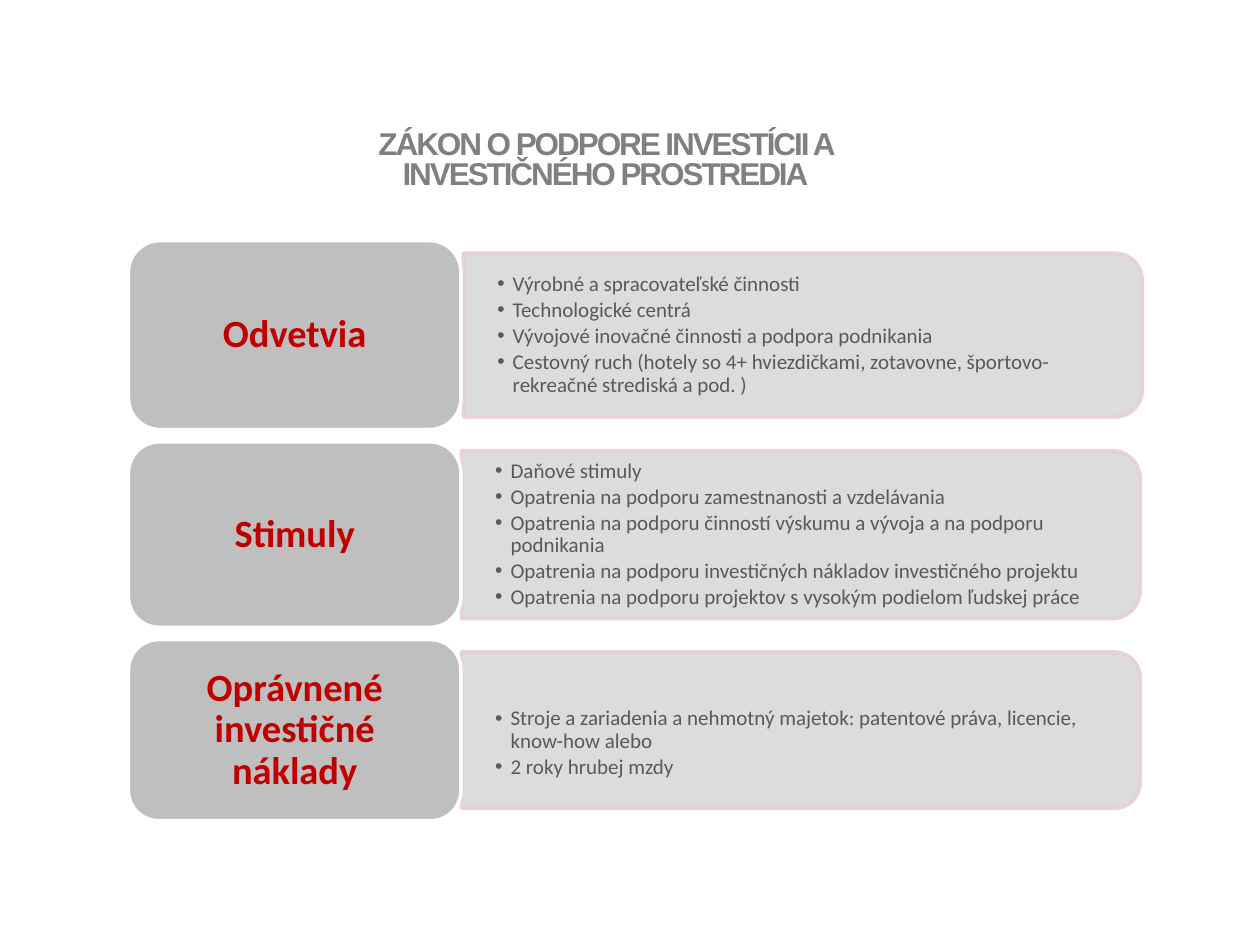
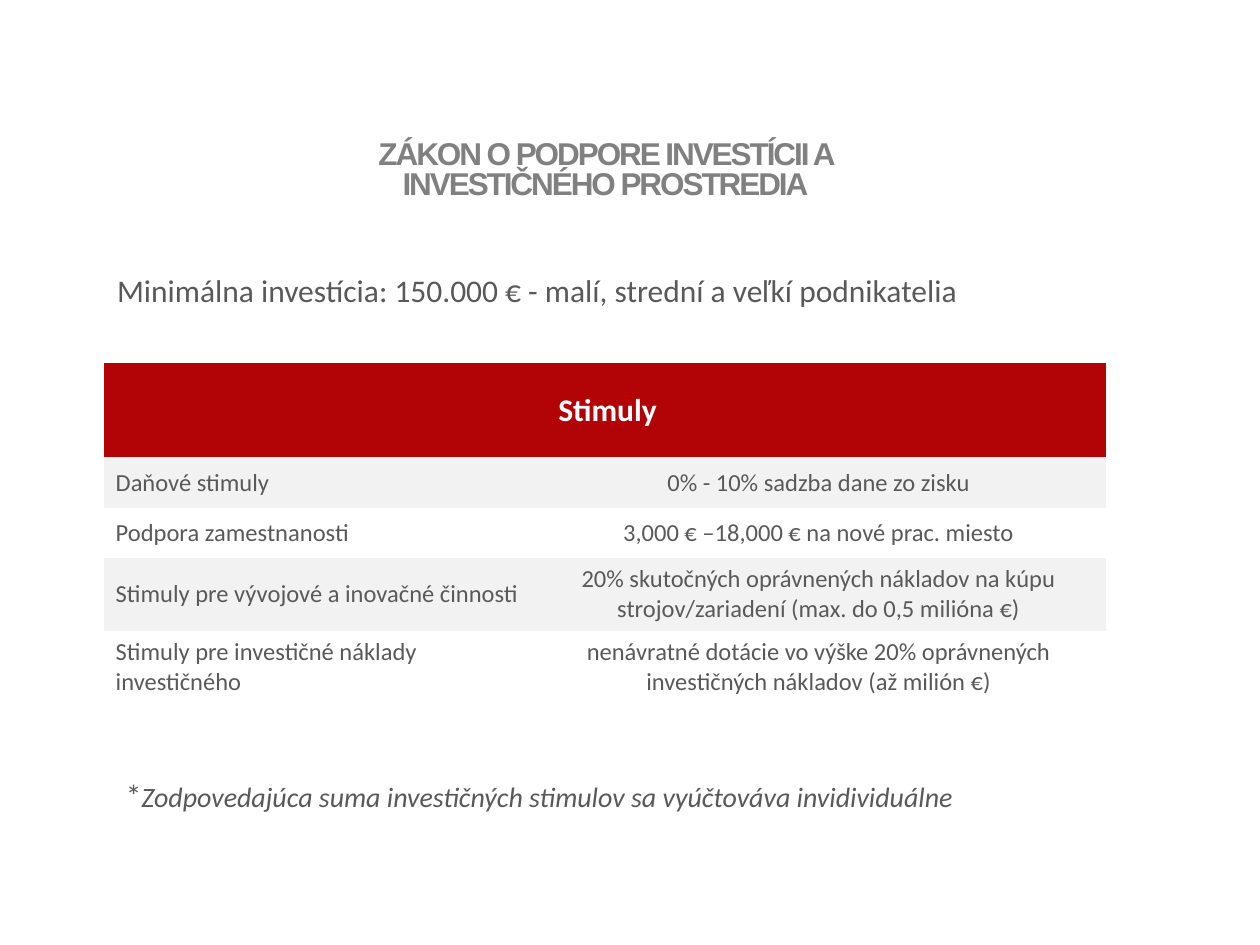
from dataclasses import dataclass

from lxml import etree
from pptx import Presentation
from pptx.dml.color import RGBColor
from pptx.enum import shapes, text
from pptx.oxml.ns import qn
from pptx.util import Pt

WHITE = RGBColor(0xFF, 0xFF, 0xFF)
GREY = RGBColor(0x80, 0x80, 0x80)
INK = RGBColor(0x59, 0x59, 0x59)
RED = RGBColor(0xC0, 0x00, 0x00)
HEAD = RGBColor(0xB2, 0x04, 0x06)
BAND = RGBColor(0xF2, 0xF2, 0xF2)
TAB = RGBColor(0xBF, 0xBF, 0xBF)
PANEL = RGBColor(0xD9, 0xD9, 0xD9)
EDGE = RGBColor(0xE8, 0xD0, 0xD0)

MID = text.MSO_ANCHOR.MIDDLE
TOP = text.MSO_ANCHOR.TOP
LEFT = text.PP_ALIGN.LEFT
CENTER = text.PP_ALIGN.CENTER
KIND = shapes.MSO_SHAPE
NO_GRID = "{2D5ABB26-0587-4C30-8999-92F81FD0307C}"

TITLE = "ZÁKON O PODPORE INVESTÍCII A INVESTIČNÉHO PROSTREDIA"
TAB_LEFT, TAB_TOP, TAB_WIDE, TAB_GAP = 73.4, 137.5, 190, 7
PANEL_WIDE, LIST_WIDE, LIST_TRIM = 388, 384, 8.6


@dataclass
class Topic:
    name: str
    items: list[str]
    tall: float
    left: float
    depth: float
    drop: float = 0


TOPICS = [
    Topic("Odvetvia", [
        "Výrobné a spracovateľské činnosti",
        "Technologické centrá",
        "Vývojové inovačné činnosti a podpora podnikania",
        "Cestovný ruch (hotely so 4+ hviezdičkami, zotavovne, "
        "športovo- rekreačné strediská a pod. )",
    ], 108, 264.8, 93.6),
    Topic("Stimuly", [
        "Daňové stimuly",
        "Opatrenia na podporu zamestnanosti a vzdelávania",
        "Opatrenia na podporu činností výskumu a vývoja a na podporu podnikania",
        "Opatrenia na podporu investičných nákladov investičného projektu",
        "Opatrenia na podporu projektov s vysokým podielom ľudskej práce",
    ], 106, 263.6, 96),
    Topic("Oprávnené investičné náklady", [
        "Stroje a zariadenia a nehmotný majetok: patentové práva, "
        "licencie, know-how alebo",
        "2 roky hrubej mzdy",
    ], 103.5, 263.6, 89.5, 15),
]

RATES = [
    ("Daňové stimuly", "0% - 10% sadzba dane zo zisku"),
    ("Podpora zamestnanosti", "3,000 € –18,000 € na nové prac. miesto"),
    ("Stimuly pre vývojové a inovačné činnosti",
     "20% skutočných oprávnených nákladov na kúpu strojov/zariadení "
     "(max. do 0,5 milióna €)"),
    ("Stimuly pre investičné náklady investičného",
     "nenávratné dotácie vo výške 20% oprávnených investičných nákladov "
     "(až milión €)"),
]


def add_run(para, words: str, size: float = 18, color: RGBColor = INK,
            bold: bool = False, italic: bool = False, face: str = "Calibri",
            track: int = 0) -> None:
    run = para.add_run()
    run.text = words
    font = run.font
    font.size, font.name, font.bold, font.italic = Pt(size), face, bold, italic
    font.color.rgb = color
    if track:
        run._r.get_or_add_rPr().set("spc", str(track))


def write(frame, lines: list[str], align=LEFT, line: float = 1, after: float = 0,
          indent: float = 0, bullet: bool = False, **font) -> None:
    for n, words in enumerate(lines):
        para = frame.add_paragraph() if n else frame.paragraphs[0]
        props = para._p.get_or_add_pPr()
        props.set("marL", str(Pt(indent)))
        props.set("indent", str(-Pt(indent) if bullet else 0))
        if bullet:
            etree.SubElement(props, qn("a:buChar")).set("char", "•")
        para.alignment, para.line_spacing = align, line
        para.space_before, para.space_after = Pt(0), Pt(after)
        add_run(para, words, **font)


def place(shape, left: float, top: float, wide: float, tall: float) -> None:
    shape.left, shape.top = Pt(left), Pt(top)
    shape.width, shape.height = Pt(wide), Pt(tall)


def setup(frame, anchor, side: float = 7.2, top: float = 3.6,
          base: float = 3.6) -> None:
    frame.word_wrap = True
    frame.auto_size = text.MSO_AUTO_SIZE.NONE
    frame.vertical_anchor = anchor
    frame.margin_left = frame.margin_right = Pt(side)
    frame.margin_top, frame.margin_bottom = Pt(top), Pt(base)


def add_title(slide, top: float) -> None:
    title = slide.shapes.title
    place(title, 184.3, top, 323.3, 42.5)
    setup(title.text_frame, TOP)
    write(title.text_frame, [TITLE], align=CENTER, line=0.8, color=GREY,
          bold=True, face="Arial", track=-120)


def add_block(slide, kind, fill: RGBColor, edge: RGBColor, box: tuple):
    block = slide.shapes.add_shape(kind, *map(Pt, box))
    block.shadow.inherit = False
    block.fill.solid()
    block.fill.fore_color.rgb = fill
    block.line.color.rgb = edge
    block.line.width = Pt(2)
    return block


def add_panel(slide, topic: Topic, mid: float) -> None:
    left = topic.left + (PANEL_WIDE - topic.depth) / 2
    panel = add_block(slide, KIND.ROUND_2_SAME_RECTANGLE, PANEL, EDGE,
                      (left, mid - PANEL_WIDE / 2, topic.depth, PANEL_WIDE))
    panel.rotation = 90
    for tint in panel._element.spPr.iter(qn("a:srgbClr")):
        etree.SubElement(tint, qn("a:alpha")).set("val", "90000")
    slide.shapes._spTree.insert(2, panel._element)


def add_topic(slide, topic: Topic, body, top: float) -> None:
    mid = top + topic.tall / 2
    add_panel(slide, topic, mid)
    tall = topic.depth - LIST_TRIM
    place(body, topic.left, mid - tall / 2, LIST_WIDE, tall)
    setup(body.text_frame, MID, 19.4, 10 + topic.drop, 10)
    write(body.text_frame, topic.items, line=0.9, after=1.8, indent=8.8,
          bullet=True, size=12)
    tab = add_block(slide, KIND.ROUNDED_RECTANGLE, TAB, WHITE,
                    (TAB_LEFT, top, TAB_WIDE, topic.tall))
    setup(tab.text_frame, MID)
    write(tab.text_frame, [topic.name], align=CENTER, line=0.9, after=7.7,
          size=22, color=RED, bold=True)


def add_note(slide, box: tuple, words: str):
    note = slide.shapes.add_textbox(*map(Pt, box)).text_frame
    setup(note, TOP)
    write(note, [words])
    return note.paragraphs[0]


def fill_cell(cell, words: str, fill: RGBColor | None, align, **font) -> None:
    cell.vertical_anchor = MID
    cell.margin_left = cell.margin_right = Pt(3.6)
    cell.margin_top = cell.margin_bottom = Pt(3.6)
    if fill is None:
        cell.fill.background()
    else:
        cell.fill.solid()
        cell.fill.fore_color.rgb = fill
    write(cell.text_frame, [words], align=align, indent=3, **font)


def add_rates(slide) -> None:
    talls = [54] + [28.8] * len(RATES)
    frame = slide.shapes.add_table(len(talls), 2, Pt(59.5), Pt(207.4),
                                   Pt(572.4), Pt(sum(talls)))
    table = frame.table
    table._tbl.tblPr.find(qn("a:tableStyleId")).text = NO_GRID
    table.first_row = table.horz_banding = False
    for col, wide in zip(table.columns, (241.2, 331.2)):
        col.width = Pt(wide)
    for row, tall in zip(table.rows, talls):
        row.height = Pt(tall)
    table.cell(0, 0).merge(table.cell(0, 1))
    fill_cell(table.cell(0, 0), "Stimuly", HEAD, CENTER, color=WHITE, bold=True)
    for n, pair in enumerate(RATES, 1):
        for col, words in enumerate(pair):
            fill_cell(table.cell(n, col), words, BAND if n % 2 else None,
                      CENTER if col else LEFT, size=14)


def show_topics(deck) -> None:
    slide = deck.slides.add_slide(deck.slide_layouts.get_by_name("Comparison"))
    add_title(slide, 71.3)
    *bodies, spare = list(slide.placeholders)[1:]
    spare._element.getparent().remove(spare._element)
    top = TAB_TOP
    for topic, body in zip(TOPICS, bodies):
        add_topic(slide, topic, body, top)
        top += topic.tall + TAB_GAP


def show_rates(deck) -> None:
    slide = deck.slides.add_slide(deck.slide_layouts.get_by_name("Title Only"))
    add_title(slide, 77)
    add_rates(slide)
    add_note(slide, (59.8, 151.2, 555.8, 29),
             "Minimálna investícia: 150.000 € - malí, strední a veľkí podnikatelia")
    foot = add_note(slide, (64.8, 440, 589.7, 29), "*")
    add_run(foot, "Zodpovedajúca suma investičných stimulov sa vyúčtováva "
            "invidividuálne", size=16, italic=True)


def main() -> None:
    deck = Presentation()
    deck.slide_width, deck.slide_height = Pt(720), Pt(540)
    show_topics(deck)
    show_rates(deck)
    deck.save("out.pptx")


if __name__ == "__main__":
    main()
